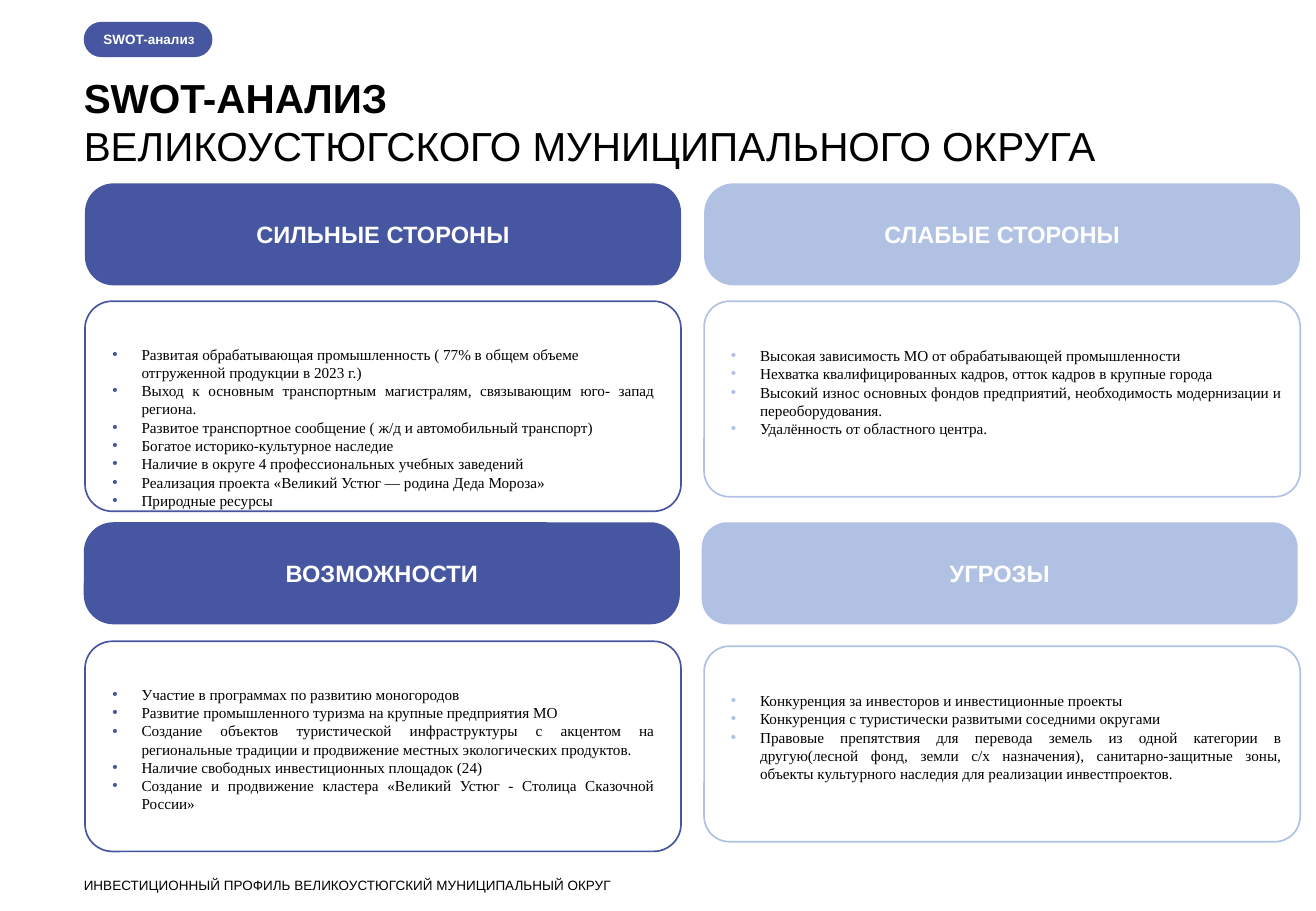
from dataclasses import dataclass

from lxml import etree
from pptx import Presentation
from pptx import util as u
from pptx.dml.color import RGBColor
from pptx.enum import shapes, text
from pptx.oxml.ns import qn

INDIGO = RGBColor(0x47, 0x56, 0xA0)
PALE = RGBColor(0xB1, 0xC1, 0xE4)
WHITE = RGBColor(0xFF, 0xFF, 0xFF)
BLACK = RGBColor(0, 0, 0)
SANS, SERIF = "Arial", "Times New Roman"
CELL = u.Inches(0.1)
COLS, ROWS = 108.4, 75
LEFT, RIGHT = 7, 58
MARGIN = 6.9
CARD_W, HEADER_H = 49.1, 8.4


@dataclass(frozen=True)
class Box:
    col: float
    row: float
    cols: float
    rows: float


@dataclass(frozen=True)
class Item:
    words: str
    justified: bool = False


@dataclass(frozen=True)
class Quadrant:
    heading: str
    header: Box
    rounding: float
    panel: Box
    insets: tuple[float, float, float, float]
    color: RGBColor
    items: tuple[Item, ...]


STRONG_INSETS = (1.6, 2.95, 1.6, 0.5)
WEAK_INSETS = (1.6, 3.1, 1, 0.5)

QUADRANTS = (
    Quadrant("СИЛЬНЫЕ СТОРОНЫ", Box(LEFT, 15.1, CARD_W, HEADER_H), 0.28,
             Box(LEFT, 24.8, CARD_W, 17.3), STRONG_INSETS, INDIGO, (
        Item("Развитая обрабатывающая промышленность ( 77% в общем объеме отгруженной продукции в 2023 г.)"),
        Item("Выход к основным транспортным магистралям, связывающим юго- запад региона.", True),
        Item("Развитое транспортное сообщение ( ж/д и автомобильный транспорт)"),
        Item("Богатое историко-культурное наследие"),
        Item("Наличие в округе 4 профессиональных учебных заведений"),
        Item("Реализация проекта «Великий Устюг — родина Деда Мороза»"),
        Item("Природные ресурсы"))),
    Quadrant("СЛАБЫЕ СТОРОНЫ", Box(RIGHT, 15.1, CARD_W, HEADER_H), 0.29,
             Box(RIGHT, 24.8, CARD_W, 16.1), WEAK_INSETS, PALE, (
        Item("Высокая зависимость МО от обрабатывающей промышленности"),
        Item("Нехватка квалифицированных кадров, отток кадров в крупные города"),
        Item("Высокий износ основных фондов предприятий, необходимость модернизации и переоборудования.", True),
        Item("Удалённость от областного центра."))),
    Quadrant("ВОЗМОЖНОСТИ", Box(MARGIN, 43, CARD_W, HEADER_H), 0.29,
             Box(LEFT, 52.8, CARD_W, 17.3), STRONG_INSETS, INDIGO, (
        Item("Участие в программах по развитию моногородов"),
        Item("Развитие промышленного туризма на крупные предприятия МО"),
        Item("Создание объектов туристической инфраструктуры с акцентом на региональные традиции "
             "и продвижение местных экологических продуктов.", True),
        Item("Наличие свободных инвестиционных площадок (24)"),
        Item("Создание и продвижение кластера «Великий Устюг - Столица Сказочной России»", True))),
    Quadrant("УГРОЗЫ", Box(57.8, 43, CARD_W, HEADER_H), 0.25,
             Box(RIGHT, 53.2, CARD_W, 16.1), WEAK_INSETS, PALE, (
        Item("Конкуренция за инвесторов и инвестиционные проекты"),
        Item("Конкуренция с туристически развитыми соседними округами"),
        Item("Правовые препятствия для перевода земель из одной категории в другую(лесной фонд, "
             "земли с/х назначения), санитарно-защитные зоны, объекты культурного наследия "
             "для реализации инвестпроектов.", True))),
)


def grid(cells: float) -> u.Emu:
    return u.Emu(round(cells * CELL))


def place(sp, box: Box) -> None:
    sp.left, sp.top = grid(box.col), grid(box.row)
    sp.width, sp.height = grid(box.cols), grid(box.rows)


def set_frame(tf, insets: tuple[float, float, float, float], anchor) -> None:
    tf.word_wrap = True
    tf.auto_size = text.MSO_AUTO_SIZE.NONE
    tf.vertical_anchor = anchor
    tf.margin_left, tf.margin_top, tf.margin_right, tf.margin_bottom = map(grid, insets)


def add_run(p, words: str, size: float, color: RGBColor, bold: bool = False, face: str = SANS) -> None:
    r = p.add_run()
    r.text = words
    r.font.size, r.font.name, r.font.bold = u.Pt(size), face, bold
    r.font.color.rgb = color


def add_card(slide, box: Box, rounding: float, fill: RGBColor | None, line: RGBColor | None):
    sp = slide.shapes.add_shape(shapes.MSO_SHAPE.ROUNDED_RECTANGLE, 0, 0, 0, 0)
    place(sp, box)
    sp.adjustments[0] = rounding
    sp.shadow.inherit = False
    if fill is None:
        sp.fill.background()
    else:
        sp.fill.solid()
        sp.fill.fore_color.rgb = fill
    if line is None:
        sp.line.fill.background()
    else:
        sp.line.color.rgb = line
        sp.line.width = u.Pt(1)
    return sp


def set_bullet(p, color: RGBColor) -> None:
    pPr = p._p.get_or_add_pPr()
    pPr.set("marL", str(grid(2.4)))
    pPr.set("indent", str(grid(-2.4)))
    clr = etree.SubElement(pPr, qn("a:buClr"))
    etree.SubElement(clr, qn("a:srgbClr"), val=str(color))
    etree.SubElement(pPr, qn("a:buFont"), typeface=SANS)
    etree.SubElement(pPr, qn("a:buChar"), char="•")


def add_quadrant(slide, q: Quadrant) -> None:
    header = add_card(slide, q.header, q.rounding, q.color, None)
    set_frame(header.text_frame, (1, 0.5, 1, 0.5), text.MSO_ANCHOR.MIDDLE)
    p = header.text_frame.paragraphs[0]
    p.alignment = text.PP_ALIGN.CENTER
    add_run(p, q.heading, 14, WHITE, True)

    tf = add_card(slide, q.panel, 0.13, None, q.color).text_frame
    set_frame(tf, q.insets, text.MSO_ANCHOR.TOP)
    for i, item in enumerate(q.items):
        p = tf.add_paragraph() if i else tf.paragraphs[0]
        set_bullet(p, q.color)
        p.alignment = text.PP_ALIGN.JUSTIFY if item.justified else text.PP_ALIGN.LEFT
        add_run(p, item.words, 9, BLACK, face=SERIF)


def set_title(slide) -> None:
    sp = slide.shapes.title
    place(sp, Box(MARGIN, 6, 100.1, 7.9))
    tf = sp.text_frame
    set_frame(tf, (0, 0, 0, 0), text.MSO_ANCHOR.TOP)
    lines = (("SWOT-АНАЛИЗ", True), ("ВЕЛИКОУСТЮГСКОГО МУНИЦИПАЛЬНОГО ОКРУГА", False))
    for i, (words, bold) in enumerate(lines):
        p = tf.add_paragraph() if i else tf.paragraphs[0]
        p.alignment = text.PP_ALIGN.LEFT
        add_run(p, words, 24, BLACK, bold)


def add_tag(slide) -> None:
    sp = add_card(slide, Box(MARGIN, 1.8, 10.6, 2.9), 0.5, INDIGO, None)
    set_frame(sp.text_frame, (1.2, 0, 0, 0), text.MSO_ANCHOR.MIDDLE)
    p = sp.text_frame.paragraphs[0]
    p.alignment = text.PP_ALIGN.LEFT
    add_run(p, "SWOT-анализ", 8, WHITE, True)


def add_footer(slide) -> None:
    sp = slide.shapes.add_textbox(0, 0, 0, 0)
    place(sp, Box(MARGIN, 72.2, 80.2, 1.2))
    set_frame(sp.text_frame, (0, 0, 0, 0), text.MSO_ANCHOR.TOP)
    add_run(sp.text_frame.paragraphs[0],
            "ИНВЕСТИЦИОННЫЙ ПРОФИЛЬ ВЕЛИКОУСТЮГСКИЙ МУНИЦИПАЛЬНЫЙ ОКРУГ", 8, BLACK)


def main() -> None:
    prs = Presentation()
    prs.slide_width, prs.slide_height = grid(COLS), grid(ROWS)
    slide = prs.slides.add_slide(prs.slide_layouts.get_by_name("Title Only"))
    set_title(slide)
    add_tag(slide)
    for q in QUADRANTS:
        add_quadrant(slide, q)
    add_footer(slide)
    prs.save("out.pptx")


if __name__ == "__main__":
    main()
